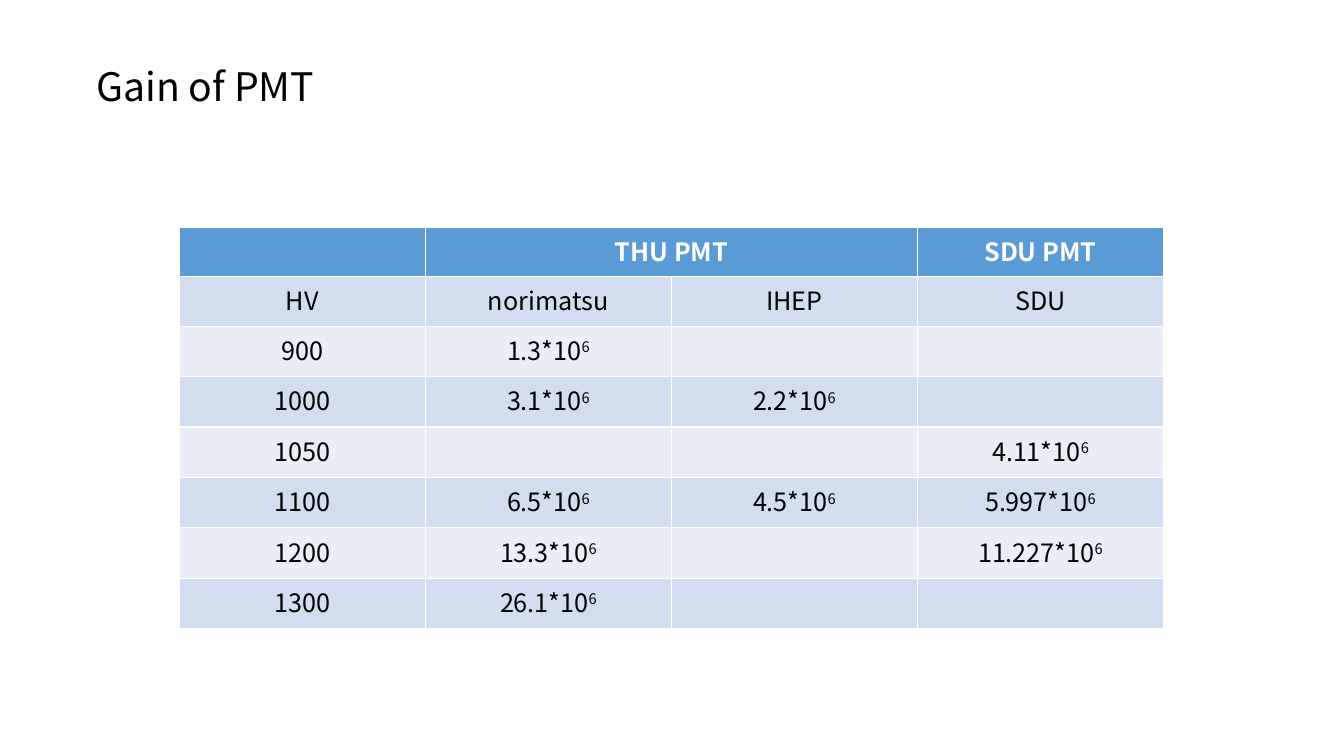
import pptx
import pptx.dml.color
import pptx.enum.text
import pptx.util

Cm = pptx.util.Cm


def color(hex_code):
    return pptx.dml.color.RGBColor.from_string(hex_code)


def add_run(paragraph, text, size, hex_code, bold=False):
    run = paragraph.add_run()
    run.text = text
    run.font.size = pptx.util.Pt(size)
    run.font.name = "Noto Sans CJK SC"
    run.font.bold = bold
    run.font.color.rgb = color(hex_code)
    return run


presentation = pptx.Presentation()
presentation.slide_width = Cm(33.87)
presentation.slide_height = Cm(19.05)
slide = presentation.slides.add_slide(presentation.slide_layouts[5])

heading = slide.shapes.title
heading.left, heading.top = Cm(2.18), Cm(1.45)
heading.width, heading.height = Cm(7.34), Cm(1.45)
heading.text_frame.word_wrap = True
heading.text_frame.auto_size = pptx.enum.text.MSO_AUTO_SIZE.SHAPE_TO_FIT_TEXT
heading.text_frame.vertical_anchor = pptx.enum.text.MSO_ANCHOR.TOP
heading_line = heading.text_frame.paragraphs[0]
heading_line.alignment = pptx.enum.text.PP_ALIGN.LEFT
add_run(heading_line, "Gain of PMT", 28, "000000")

gain_rows = [
    ["", "THU PMT", "", "SDU PMT"],
    ["HV", "norimatsu", "IHEP", "SDU"],
    ["900", "1.3*10^6", "", ""],
    ["1000", "3.1*10^6", "2.2*10^6", ""],
    ["1050", "", "", "4.11*10^6"],
    ["1100", "6.5*10^6", "4.5*10^6", "5.997*10^6"],
    ["1200", "13.3*10^6", "", "11.227*10^6"],
    ["1300", "26.1*10^6", "", ""],
]
gains = slide.shapes.add_table(
    len(gain_rows), 4, Cm(4.52), Cm(5.72), Cm(24.8), Cm(10.12)
).table
gains.cell(0, 1).merge(gains.cell(0, 2))

for row_index, entries in enumerate(gain_rows):
    is_header = row_index == 0
    gains.rows[row_index].height = Cm(1.25 if row_index < 2 else 1.27)
    band = "5B9BD5" if is_header else ("EAEFF7", "D2DEEF")[row_index % 2]
    ink = "FFFFFF" if is_header else "000000"
    for column_index, entry in enumerate(entries):
        cell = gains.cell(row_index, column_index)
        cell.fill.solid()
        cell.fill.fore_color.rgb = color(band)
        if not entry:
            continue
        line = cell.text_frame.paragraphs[0]
        line.alignment = pptx.enum.text.PP_ALIGN.CENTER
        base, _, exponent = entry.partition("^")
        add_run(line, base, 18, ink, is_header)
        if exponent:
            power = add_run(line, exponent, 18, ink)
            power._r.get_or_add_rPr().set("baseline", "30000")

presentation.save("out.pptx")
